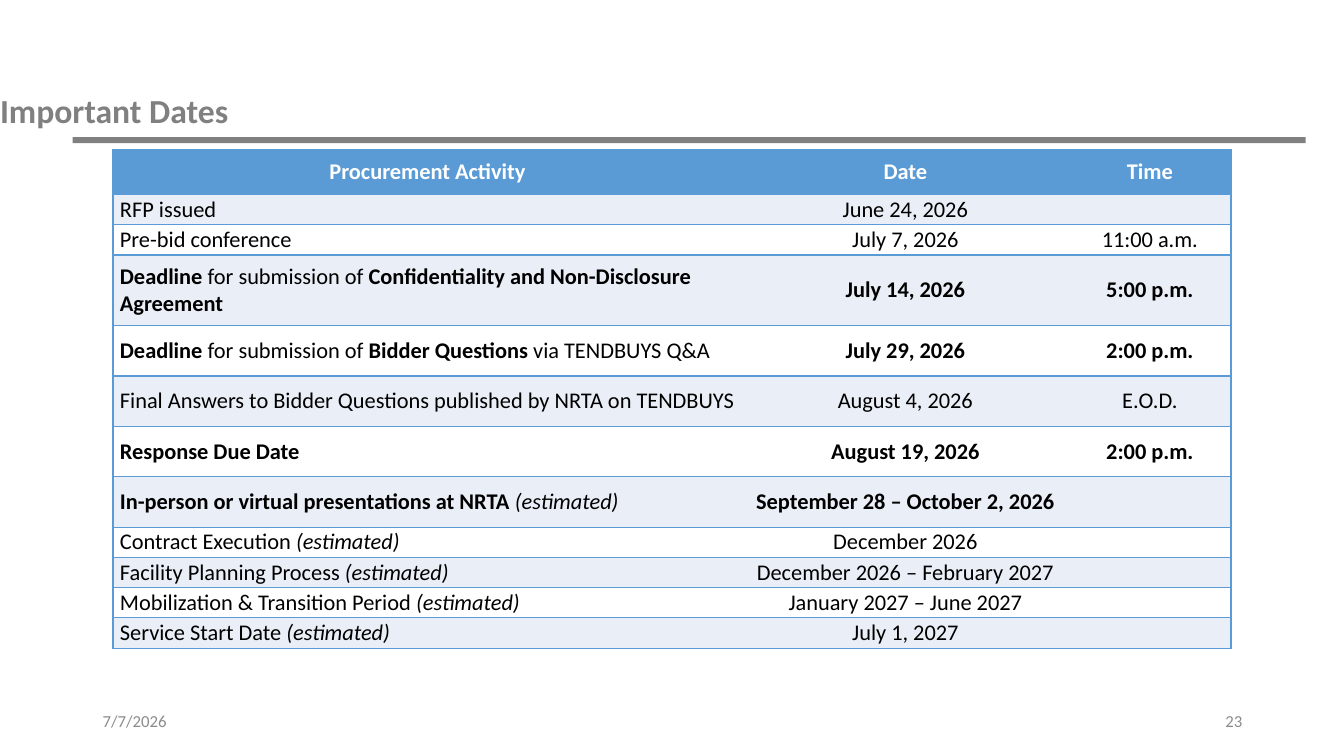
from lxml.etree import SubElement
from pptx import Presentation
from pptx.dml.color import RGBColor
from pptx.enum.shapes import MSO_SHAPE
from pptx.enum.text import MSO_ANCHOR, MSO_AUTO_SIZE, PP_ALIGN
from pptx.oxml.ns import qn
from pptx.util import Emu, Pt

PX = 9144
FONT = "Calibri"
GRAY = RGBColor(0x80, 0x80, 0x80)
FOOTER_GRAY = RGBColor(0x8C, 0x8C, 0x8C)
BLUE = RGBColor(0x5B, 0x9B, 0xD5)
PALE_BLUE = RGBColor(0xEA, 0xEF, 0xF7)
WHITE = RGBColor(0xFF, 0xFF, 0xFF)
BLACK = RGBColor(0, 0, 0)

ESTIMATED = ("(estimated)", "i")
HEADINGS = ("Procurement Activity", "Date", "Time")
COLUMN_WIDTHS = (624, 324, 161)
HEADER_HEIGHT = 45
MILESTONES = [
    (30, [("RFP issued", "")], "June 24, 2026", "", ""),
    (30, [("Pre-bid conference", "")], "July 7, 2026", "11:00 a.m.", ""),
    (70, [("Deadline", "b"), (" for submission of ", ""),
          ("Confidentiality and Non-Disclosure Agreement", "b")],
     "July 14, 2026", "5:00 p.m.", "b"),
    (50, [("Deadline", "b"), (" for submission of ", ""),
          ("Bidder Questions ", "b"), ("via TENDBUYS Q&A", "")],
     "July 29, 2026", "2:00 p.m.", "b"),
    (50, [("Final Answers to Bidder Questions published by NRTA on TENDBUYS", "")],
     "August 4, 2026", "E.O.D.", ""),
    (50, [("Response Due Date", "b")], "August 19, 2026", "2:00 p.m.", "b"),
    (50, [("In-person or virtual presentations at NRTA ", "b"), ESTIMATED],
     "September 28 – October 2, 2026", "", "b"),
    (30, [("Contract Execution ", ""), ESTIMATED], "December 2026", "", ""),
    (30, [("Facility Planning Process ", ""), ESTIMATED],
     "December 2026 – February 2027", "", ""),
    (30, [("Mobilization & Transition Period ", ""), ESTIMATED],
     "January 2027 – June 2027", "", ""),
    (30, [("Service Start Date ", ""), ESTIMATED], "July 1, 2027", "", ""),
]


def px(*lengths):
    """Turn px lengths into EMU."""
    return [Emu(length * PX) for length in lengths]


def style_run(run, size, color, style=""):
    """Format a run; style holds b for bold and i for italic."""
    run.font.name = FONT
    run.font.size = Pt(size)
    run.font.color.rgb = color
    run.font.bold = "b" in style
    run.font.italic = "i" in style


def add_title(slide, box):
    """Place the slide title at the bottom left of its box."""
    title = slide.shapes.title
    title.left, title.top, title.width, title.height = px(*box)
    frame = title.text_frame
    frame.text = "Important Dates"
    frame.auto_size = MSO_AUTO_SIZE.NONE
    frame.vertical_anchor = MSO_ANCHOR.BOTTOM
    frame.margin_left = frame.margin_top = frame.margin_bottom = 0
    heading = frame.paragraphs[0]
    heading.alignment = PP_ALIGN.LEFT
    heading.line_spacing = 0.9
    style_run(heading.runs[0], 24, GRAY, "b")


def add_rule(slide, box):
    """Draw the gray bar under the title."""
    rule = slide.shapes.add_shape(MSO_SHAPE.RECTANGLE, *px(*box))
    rule.shadow.inherit = False
    rule.fill.solid()
    rule.fill.fore_color.rgb = GRAY
    rule.line.fill.background()


def add_footer(slide, box, text, alignment):
    """Write one footer entry in its box."""
    frame = slide.shapes.add_textbox(*px(*box)).text_frame
    frame.word_wrap = True
    frame.vertical_anchor = MSO_ANCHOR.MIDDLE
    frame.text = text
    entry = frame.paragraphs[0]
    entry.alignment = alignment
    style_run(entry.runs[0], 12, FOOTER_GRAY)


def add_borders(cell, visible_sides):
    """Draw the visible cell sides in blue and hide the others."""
    properties = cell._tc.get_or_add_tcPr()
    for side in "LRTB":
        border = SubElement(properties, qn(f"a:ln{side}"), w=str(Pt(1)))
        if side in visible_sides:
            fill = SubElement(border, qn("a:solidFill"))
            SubElement(fill, qn("a:srgbClr"), val=str(BLUE))
        else:
            SubElement(border, qn("a:noFill"))


def fill_cell(cell, pieces, alignment, color, background, visible_sides):
    """Write styled pieces of text into a cell and colour it."""
    add_borders(cell, visible_sides)
    cell.fill.solid()
    cell.fill.fore_color.rgb = background
    cell.vertical_anchor = MSO_ANCHOR.MIDDLE
    cell.margin_left, cell.margin_right = px(7, 7)
    cell.margin_top = cell.margin_bottom = 0
    line = cell.text_frame.paragraphs[0]
    line.alignment = alignment
    for text, style in pieces:
        if text:
            run = line.add_run()
            run.text = text
            style_run(run, 16, color, style)
        else:
            SubElement(line._p, qn("a:endParaRPr"), sz="1600")


def add_schedule(slide, left, top):
    """Build the table of procurement dates from its top left corner."""
    heights = [HEADER_HEIGHT] + [milestone[0] for milestone in MILESTONES]
    schedule = slide.shapes.add_table(
        len(heights), len(COLUMN_WIDTHS),
        *px(left, top, sum(COLUMN_WIDTHS), sum(heights))).table
    schedule.horz_banding = False
    for column, width in zip(schedule.columns, px(*COLUMN_WIDTHS)):
        column.width = width
    for row, height in zip(schedule.rows, px(*heights)):
        row.height = height

    contents = [[[(heading, "b")] for heading in HEADINGS]]
    for _, activity, date, time, style in MILESTONES:
        contents.append([activity, [(date, style)], [(time, style)]])
    outer_sides = ("LTB", "TB", "RTB")
    for row_index, row_pieces in enumerate(contents):
        is_header = row_index == 0
        color = WHITE if is_header else BLACK
        background = BLUE if is_header else (WHITE, PALE_BLUE)[row_index % 2]
        for column_index, pieces in enumerate(row_pieces):
            centered = is_header or column_index > 0
            fill_cell(schedule.cell(row_index, column_index), pieces,
                      PP_ALIGN.CENTER if centered else PP_ALIGN.LEFT,
                      color, background, outer_sides[column_index])


def main():
    """Build and save the slide."""
    deck = Presentation()
    deck.slide_width, deck.slide_height = px(1333, 750)
    slide = deck.slides.add_slide(deck.slide_layouts[5])
    add_rule(slide, (72, 136, 1223, 6))
    add_title(slide, (0, 13, 462, 117))
    add_footer(slide, (92, 695, 300, 40), "7/7/2026", PP_ALIGN.LEFT)
    add_footer(slide, (1059, 695, 183, 40), "23", PP_ALIGN.RIGHT)
    add_schedule(slide, 112, 148)
    deck.save("out.pptx")


if __name__ == "__main__":
    main()
